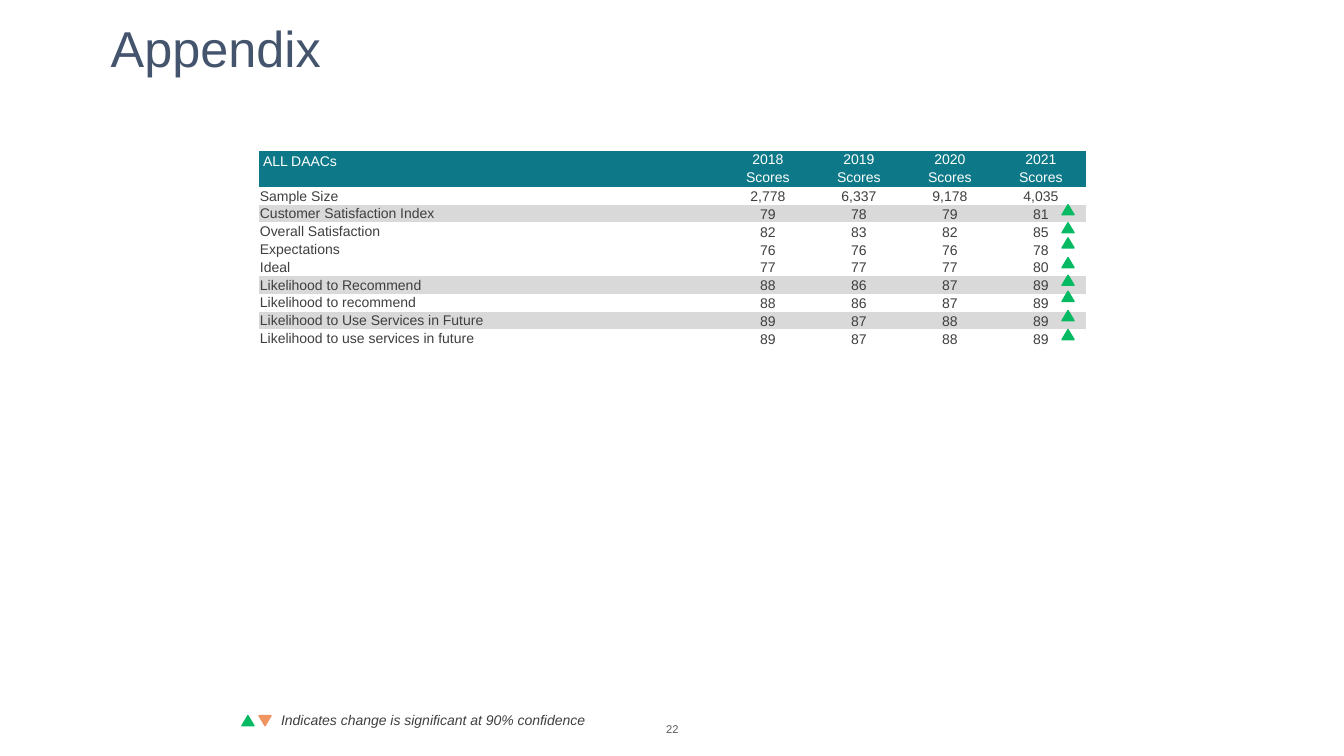
from lxml.etree import SubElement
from pptx import Presentation
from pptx.dml.color import RGBColor
from pptx.enum.shapes import MSO_SHAPE as SHAPE
from pptx.enum.text import MSO_ANCHOR as ANCHOR, PP_ALIGN as ALIGN
from pptx.oxml.ns import qn
from pptx.util import Pt

TEAL, GRAY, WHITE, INK = "0D7988", "D9D9D9", "FFFFFF", "3F3F3F"
GREEN, ORANGE = "06BA63", "EF9562"
NO_STYLE = "{2D5ABB26-0587-4C30-8999-92F81FD0307C}"


def rgb(color):
    return RGBColor.from_string(color)


class Deck:
    font = "Arial"

    def __init__(self, width, height):
        self.prs = Presentation()
        self.prs.slide_width, self.prs.slide_height = Pt(width), Pt(height)
        self.s = self.prs.slides.add_slide(self.prs.slide_layouts[6])

    def paragraph(self, tf, text, size, color, align=ALIGN.LEFT, italic=False):
        p = tf.paragraphs[0]
        p.alignment = align
        if text:
            p.add_run().text = text
        else:
            SubElement(p._p, qn("a:endParaRPr"), sz=str(size * 100))
        p.font.name, p.font.size = self.font, Pt(size)
        p.font.italic = italic
        p.font.color.rgb = rgb(color)
        return p

    def text(self, x, y, w, h, text, size, color, anchor=ANCHOR.TOP, **style):
        tf = self.s.shapes.add_textbox(Pt(x), Pt(y), Pt(w), Pt(h)).text_frame
        tf.word_wrap = True
        tf.vertical_anchor = anchor
        return self.paragraph(tf, text, size, color, **style)

    def triangle(self, x, y, color, rotation=0):
        sp = self.s.shapes.add_shape(SHAPE.ISOSCELES_TRIANGLE, Pt(x), Pt(y), Pt(8.6), Pt(7.2))
        sp.shadow.inherit = False
        sp.rotation = rotation
        sp.fill.solid()
        sp.fill.fore_color.rgb = sp.line.color.rgb = rgb(color)
        sp.line.width = Pt(1)

    def cell(self, cell, text, fill, color, align, anchor):
        cell.margin_left = cell.margin_right = cell.margin_top = Pt(0.7)
        cell.margin_bottom = 0
        cell.vertical_anchor = anchor
        if fill:
            cell.fill.solid()
            cell.fill.fore_color.rgb = rgb(fill)
        else:
            cell.fill.background()
        self.paragraph(cell.text_frame, text, 10, color, align)

    def table(self, x, y, widths, row_height, rows):
        frame = self.s.shapes.add_table(len(rows), len(widths), Pt(x), Pt(y),
                                        Pt(sum(widths)), Pt(row_height * len(rows)))
        table = frame.table
        table.first_row = table.horz_banding = False
        table._tbl.tblPr.find(qn("a:tableStyleId")).text = NO_STYLE
        for column, width in zip(table.columns, widths):
            column.width = Pt(width)
        for r, (fill, *values) in enumerate(rows):
            table.rows[r].height = Pt(row_height)
            header = fill == TEAL
            for c, value in enumerate(values):
                if c == 0:
                    anchor = ANCHOR.BOTTOM if header or not fill else ANCHOR.MIDDLE
                else:
                    anchor = ANCHOR.TOP if header else ANCHOR.BOTTOM
                self.cell(table.cell(r, c), value, fill, WHITE if header else INK,
                          ALIGN.CENTER if c else ALIGN.LEFT, anchor)


def main():
    deck = Deck(960, 540)
    deck.text(452.2, 512.6, 56.2, 17.3, "22", 8, "595959", align=ALIGN.CENTER)
    title = deck.text(72, 0, 888, 72.7, "Appendix", 36, "45546D", ANCHOR.MIDDLE)
    title.line_spacing = 0.9

    deck.text(193.7, 504.7, 286.6, 19.4,
              "Indicates change is significant at 90% confidence", 10, INK, italic=True)
    deck.triangle(172.8, 511.2, GREEN)
    deck.triangle(185, 511.2, ORANGE, 180)

    rows = [
        (TEAL, " ALL DAACs", "2018", "2019", "2020", "2021"),
        (TEAL, "", *["Scores"] * 4),
        (None, "Sample Size", "2,778", "6,337", "9,178", "4,035"),
        (GRAY, "Customer Satisfaction Index", "79", "78", "79", "81"),
        (WHITE, "Overall Satisfaction", "82", "83", "82", "85"),
        (WHITE, "Expectations", "76", "76", "76", "78"),
        (WHITE, "Ideal", "77", "77", "77", "80"),
        (GRAY, "Likelihood to Recommend", "88", "86", "87", "89"),
        (WHITE, "Likelihood to recommend", "88", "86", "87", "89"),
        (GRAY, "Likelihood to Use Services in Future", "89", "87", "88", "89"),
        (WHITE, "Likelihood to use services in future", "89", "87", "88", "89"),
    ]
    deck.table(185, 108, [331] + [65] * 4, 12.7, rows)
    for y in (146.2, 159.1, 169.9, 184, 196.6, 208.1, 221.8, 235.4):
        deck.triangle(758.6, y, GREEN)

    deck.prs.save("out.pptx")


if __name__ == "__main__":
    main()
